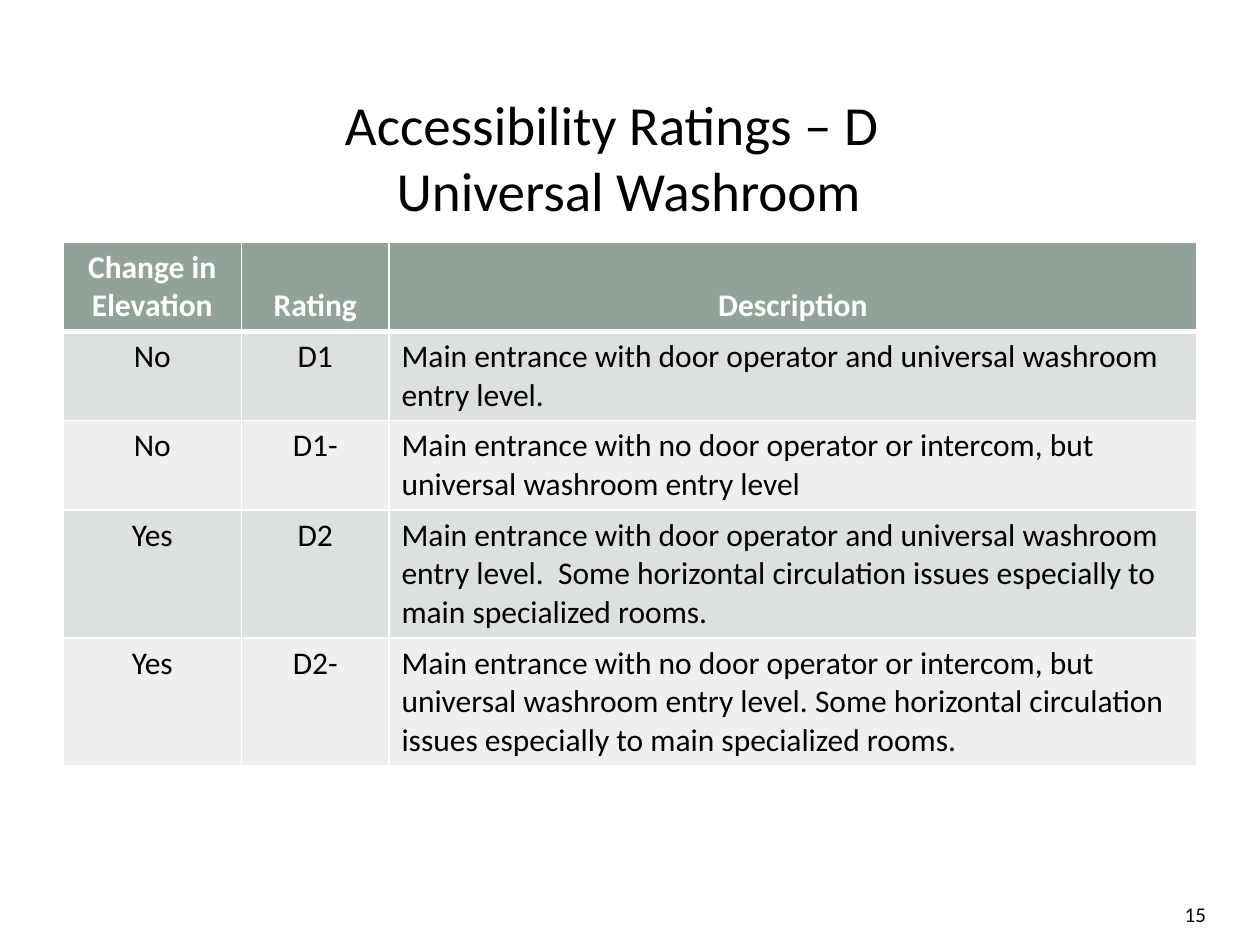
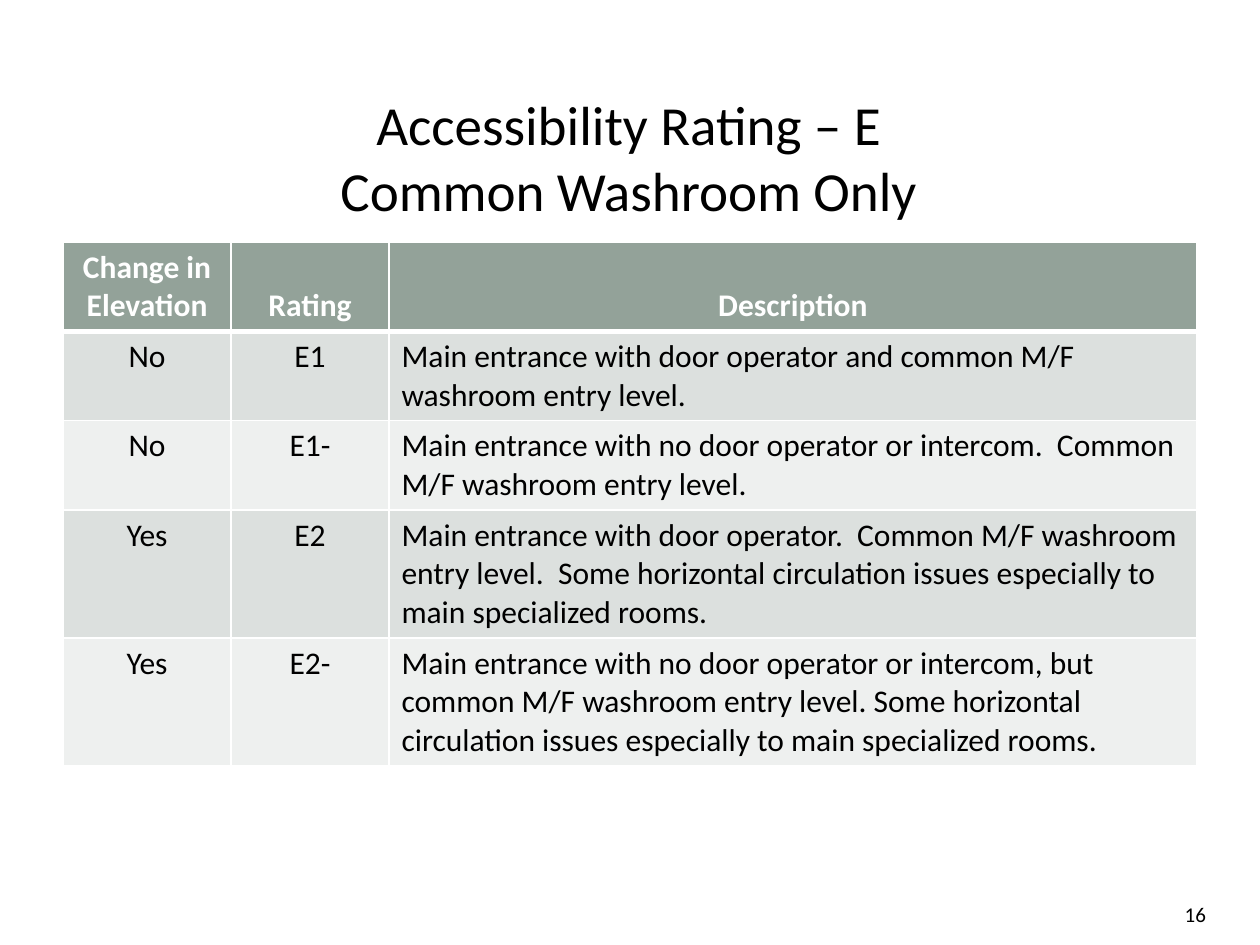
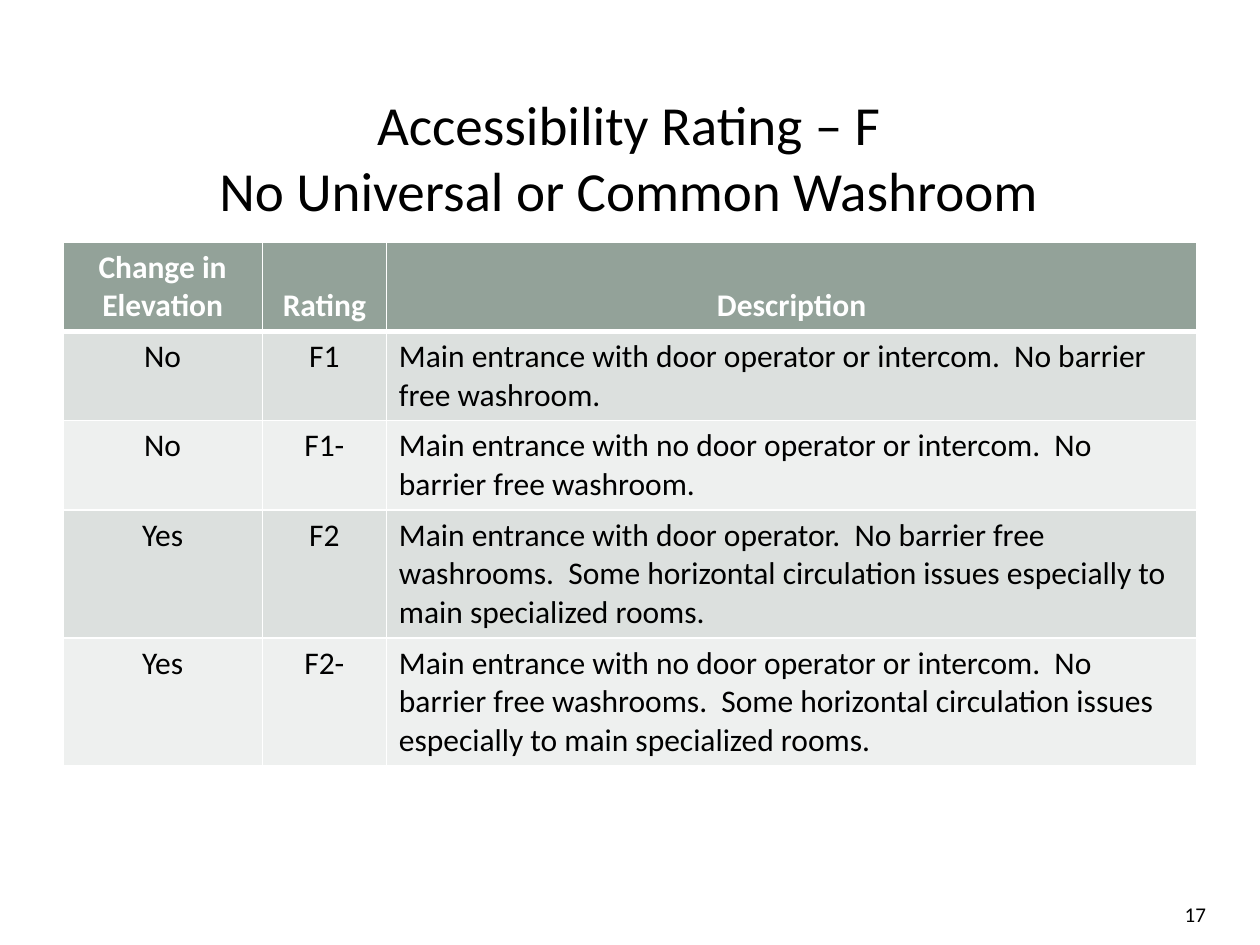
from dataclasses import dataclass

from lxml import etree
from pptx import Presentation
from pptx.dml.color import RGBColor
from pptx.enum.text import MSO_ANCHOR, PP_ALIGN
from pptx.oxml.ns import qn
from pptx.util import Cm, Pt

LEFT, CENTER, RIGHT = PP_ALIGN.LEFT, PP_ALIGN.CENTER, PP_ALIGN.RIGHT
TOP, MIDDLE, BOTTOM = MSO_ANCHOR.TOP, MSO_ANCHOR.MIDDLE, MSO_ANCHOR.BOTTOM
BLANK_LAYOUT = 6


@dataclass(frozen=True)
class Theme:
    font: str = "Calibri"
    text: str = "000000"
    white: str = "FFFFFF"
    header: str = "93A299"
    bands: tuple = ("DCE0DE", "EEF0EF")
    title_size: float = 31.5
    body_size: float = 18
    number_size: float = 12
    rule: float = 1
    header_rule: float = 3


THEME = Theme()
TITLE_BOX = (1.2, 1.7, 22.94, 2.9)
TABLE_BOX = (1.27, 4.88, 22.86, 10.56)
NUMBER_BOX = (21.59, 17.78, 2.97, 0.91)
ROW_HEIGHTS = (1.8, 1.8, 1.8, 2.58, 2.58)
HEADINGS = ("Change in Elevation", "Rating", "Description")
ELEVATION_CHANGES = ("No", "No", "Yes", "Yes")
RATING_LEVELS = ("1", "1-", "2", "2-")
CIRCULATION = "Some horizontal circulation issues especially to main specialized rooms."
FIRST_PAGE = 15

RATINGS = [
    {
        "letter": "D",
        "title": "Accessibility Ratings – D\t\vUniversal Washroom",
        "widths": (3.6, 2.97),
        "descriptions": (
            "Main entrance with door operator and universal washroom entry level.",
            "Main entrance with no door operator or intercom, but universal washroom entry level",
            f"Main entrance with door operator and universal washroom entry level.  {CIRCULATION}",
            "Main entrance with no door operator or intercom, but universal washroom "
            f"entry level. {CIRCULATION}",
        ),
    },
    {
        "letter": "E",
        "title": "Accessibility Rating – E\vCommon Washroom Only",
        "widths": (3.39, 3.18),
        "descriptions": (
            "Main entrance with door operator and common M/F washroom entry level.",
            "Main entrance with no door operator or intercom.  Common M/F washroom entry level.",
            f"Main entrance with door operator.  Common M/F washroom entry level.  {CIRCULATION}",
            "Main entrance with no door operator or intercom, but common M/F washroom "
            f"entry level. {CIRCULATION}",
        ),
    },
    {
        "letter": "F",
        "title": "Accessibility Rating – F\vNo Universal or Common Washroom",
        "widths": (4.02, 2.5),
        "descriptions": (
            "Main entrance with door operator or intercom.  No barrier free washroom.",
            "Main entrance with no door operator or intercom.  No barrier free washroom.",
            f"Main entrance with door operator.  No barrier free washrooms.  {CIRCULATION}",
            "Main entrance with no door operator or intercom.  No barrier free washrooms.  "
            f"{CIRCULATION}",
        ),
    },
]


def apply_format(target, values):
    for name, value in values.items():
        setattr(target, name, value)


def write_text(text_frame, text, size, alignment, color=THEME.text, bold=False):
    paragraph = text_frame.paragraphs[0]
    paragraph.text = text
    paragraph.alignment = alignment
    for run in paragraph.runs:
        apply_format(run.font, {"name": THEME.font, "size": Pt(size), "bold": bold})
        run.font.color.rgb = RGBColor.from_string(color)


def add_text(slide, box, text, size, alignment, frame_format):
    shape = slide.shapes.add_textbox(*map(Cm, box))
    apply_format(shape.text_frame, {"word_wrap": True, **frame_format})
    write_text(shape.text_frame, text, size, alignment)


def set_borders(cell, widths):
    properties = cell._tc.get_or_add_tcPr()
    for side, width in widths.items():
        line = etree.SubElement(properties, qn(f"a:ln{side}"), w=str(Pt(width)))
        fill = etree.SubElement(line, qn("a:solidFill"))
        etree.SubElement(fill, qn("a:srgbClr"), val=THEME.white)


def format_cell(cell, text, row, column):
    is_header = row == 0
    is_description = column == len(HEADINGS) - 1
    set_borders(cell, {
        "L": THEME.rule,
        "R": THEME.rule,
        "T": THEME.header_rule if row == 1 else THEME.rule,
        "B": THEME.header_rule if is_header else THEME.rule,
    })
    cell.fill.solid()
    color = THEME.header if is_header else THEME.bands[(row - 1) % 2]
    cell.fill.fore_color.rgb = RGBColor.from_string(color)
    cell.vertical_anchor = BOTTOM if is_header else TOP
    write_text(
        cell.text_frame,
        text,
        THEME.body_size,
        LEFT if is_description and not is_header else CENTER,
        THEME.white if is_header else THEME.text,
        is_header,
    )


def add_rating_table(slide, box, rating):
    labels = [rating["letter"] + level for level in RATING_LEVELS]
    rows = [HEADINGS, *zip(ELEVATION_CHANGES, labels, rating["descriptions"])]
    table = slide.shapes.add_table(len(rows), len(HEADINGS), *map(Cm, box)).table
    widths = (*rating["widths"], box[2] - sum(rating["widths"]))
    for column, width in zip(table.columns, widths):
        column.width = Cm(width)
    for row, height in zip(table.rows, ROW_HEIGHTS):
        row.height = Cm(height)
    for row_index, texts in enumerate(rows):
        for column_index, text in enumerate(texts):
            format_cell(table.cell(row_index, column_index), text, row_index, column_index)


def add_rating_slide(presentation, rating, page):
    slide = presentation.slides.add_slide(presentation.slide_layouts[BLANK_LAYOUT])
    add_text(slide, TITLE_BOX, rating["title"], THEME.title_size, CENTER,
             {"vertical_anchor": MIDDLE})
    add_rating_table(slide, TABLE_BOX, rating)
    add_text(slide, NUMBER_BOX, str(page), THEME.number_size, RIGHT,
             {"vertical_anchor": BOTTOM, "margin_bottom": 0})


def main():
    presentation = Presentation()
    apply_format(presentation, {"slide_width": Cm(25.4), "slide_height": Cm(19.05)})
    for page, rating in enumerate(RATINGS, FIRST_PAGE):
        add_rating_slide(presentation, rating, page)
    presentation.save("out.pptx")


if __name__ == "__main__":
    main()
